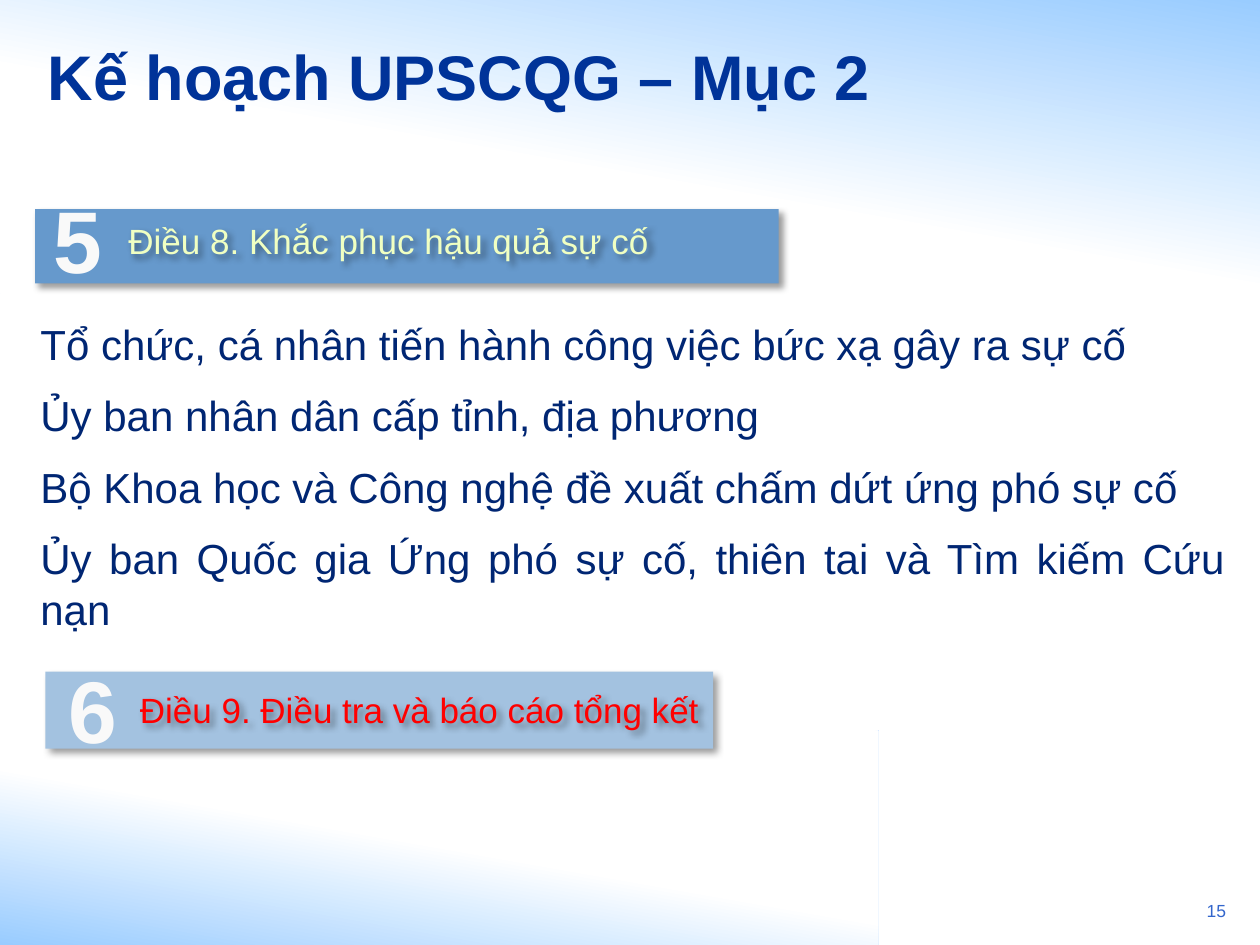
from lxml import etree
from pptx import Presentation
from pptx.dml.color import RGBColor
from pptx.enum.shapes import MSO_SHAPE
from pptx.enum.text import MSO_ANCHOR, PP_ALIGN
from pptx.oxml.ns import qn
from pptx.util import Pt

RECT = MSO_SHAPE.RECTANGLE
MIDDLE = MSO_ANCHOR.MIDDLE
LEFT, CENTER, RIGHT, JUSTIFY = PP_ALIGN.LEFT, PP_ALIGN.CENTER, PP_ALIGN.RIGHT, PP_ALIGN.JUSTIFY

THEME = {
    "font": "Arial",
    "sky": "99CCFF", "white": "FFFFFF",
    "title": ("003399", 36), "body": ("002673", 24),
    "number": ("F9F9F9", 50), "page": ("3366CC", 10),
    "heading_size": 20, "gap": 6,
    "shadow": {"color": "000000", "alpha": 40, "blur": 4, "distance": 3, "angle": 45},
}

TITLE = "Kế hoạch UPSCQG – Mục 2"
PAGE = "15"
DUTIES = [
    "Tổ chức, cá nhân tiến hành công việc bức xạ gây ra sự cố",
    "Ủy ban nhân dân cấp tỉnh, địa phương",
    "Bộ Khoa học và Công nghệ đề xuất chấm dứt ứng phó sự cố",
    "Ủy ban Quốc gia Ứng phó sự cố, thiên tai và Tìm kiếm Cứu nạn",
]
ARTICLES = [
    {"number": "5", "heading": "Điều 8. Khắc phục hậu quả sự cố",
     "fill": "6699CC", "color": "F0FFC2", "bar": (20, 119.5, 425, 42.5),
     "heading_at": (59, 118, 431, 39), "number_at": (8.6, 103, 72, 67.7)},
    {"number": "6", "heading": "Điều 9. Điều tra và báo cáo tổng kết",
     "fill": "A3C2E0", "color": "FF0000", "bar": (26, 383.8, 381.6, 44),
     "heading_at": (65.5, 386, 612, 39), "number_at": (17.3, 371.5, 72, 67.7)},
]
GLOWS = [
    {"at": (0, 417.6, 501.8, 122.4), "angle": 80, "fade": 0.48},
    {"at": (0, 0, 720, 167.8), "angle": 260, "fade": 0.56},
]


def points(box):
    return [Pt(value) for value in box]


def write(shape, lines, color, size, align=LEFT, bold=False, gap=0):
    frame = shape.text_frame
    frame.word_wrap = True
    frame.text = "\n".join(lines)
    for index, paragraph in enumerate(frame.paragraphs):
        paragraph.alignment = align
        paragraph.space_before = Pt(gap if index else 0)
        paragraph.space_after = Pt(gap)
        for run in paragraph.runs:
            run.font.name = THEME["font"]
            run.font.size = Pt(size)
            run.font.bold = bold
            run.font.color.rgb = RGBColor.from_string(color)


def add_bar(shapes, box):
    bar = shapes.add_shape(RECT, *points(box))
    bar.line.fill.background()
    bar.shadow.inherit = False
    return bar


def cast_shadow(shape):
    shape.shadow.inherit = False
    style = THEME["shadow"]
    effects = shape._element.spPr.find(qn("a:effectLst"))
    outer = etree.SubElement(
        effects, qn("a:outerShdw"), blurRad=str(Pt(style["blur"])),
        dist=str(Pt(style["distance"])), dir=str(style["angle"] * 60000),
        algn="tl", rotWithShape="0")
    color = etree.SubElement(outer, qn("a:srgbClr"), val=style["color"])
    etree.SubElement(color, qn("a:alpha"), val=str(style["alpha"] * 1000))


def add_glow(slide, glow):
    bar = add_bar(slide.shapes, glow["at"])
    bar.fill.gradient()
    bar.fill.gradient_angle = glow["angle"]
    stops = zip(bar.fill.gradient_stops, (THEME["sky"], THEME["white"]), (0, glow["fade"]))
    for stop, color, position in stops:
        stop.color.rgb = RGBColor.from_string(color)
        stop.position = position


def add_article(slide, article):
    group = slide.shapes.add_group_shape()
    bar = add_bar(group.shapes, article["bar"])
    bar.fill.solid()
    bar.fill.fore_color.rgb = RGBColor.from_string(article["fill"])
    cast_shadow(bar)
    heading = group.shapes.add_textbox(*points(article["heading_at"]))
    frame = heading.text_frame
    frame.margin_left = frame.margin_right = Pt(14.4)
    frame.margin_top = frame.margin_bottom = Pt(7.2)
    write(heading, [article["heading"]], article["color"], THEME["heading_size"], gap=THEME["gap"])
    cast_shadow(heading)
    number = slide.shapes.add_textbox(*points(article["number_at"]))
    write(number, [article["number"]], *THEME["number"], align=CENTER, bold=True)


def main():
    deck = Presentation()
    deck.slide_width, deck.slide_height = Pt(720), Pt(540)
    slide = deck.slides.add_slide(deck.slide_layouts[5])
    for glow in GLOWS:
        add_glow(slide, glow)

    page = slide.shapes.add_textbox(*points((667.4, 510.5, 40.3, 23)))
    write(page, [PAGE], *THEME["page"], align=RIGHT)

    title = slide.shapes.title
    title.left, title.top, title.width, title.height = points((20, 9.4, 532.8, 67.7))
    title.text_frame.vertical_anchor = MIDDLE
    write(title, [TITLE], *THEME["title"], bold=True)
    slide.shapes._spTree.append(title._element)

    duties = slide.shapes.add_textbox(*points((16, 178.5, 691, 324)))
    write(duties, DUTIES, *THEME["body"], align=JUSTIFY, gap=THEME["gap"])

    for article in ARTICLES:
        add_article(slide, article)
    deck.save("out.pptx")


if __name__ == "__main__":
    main()
